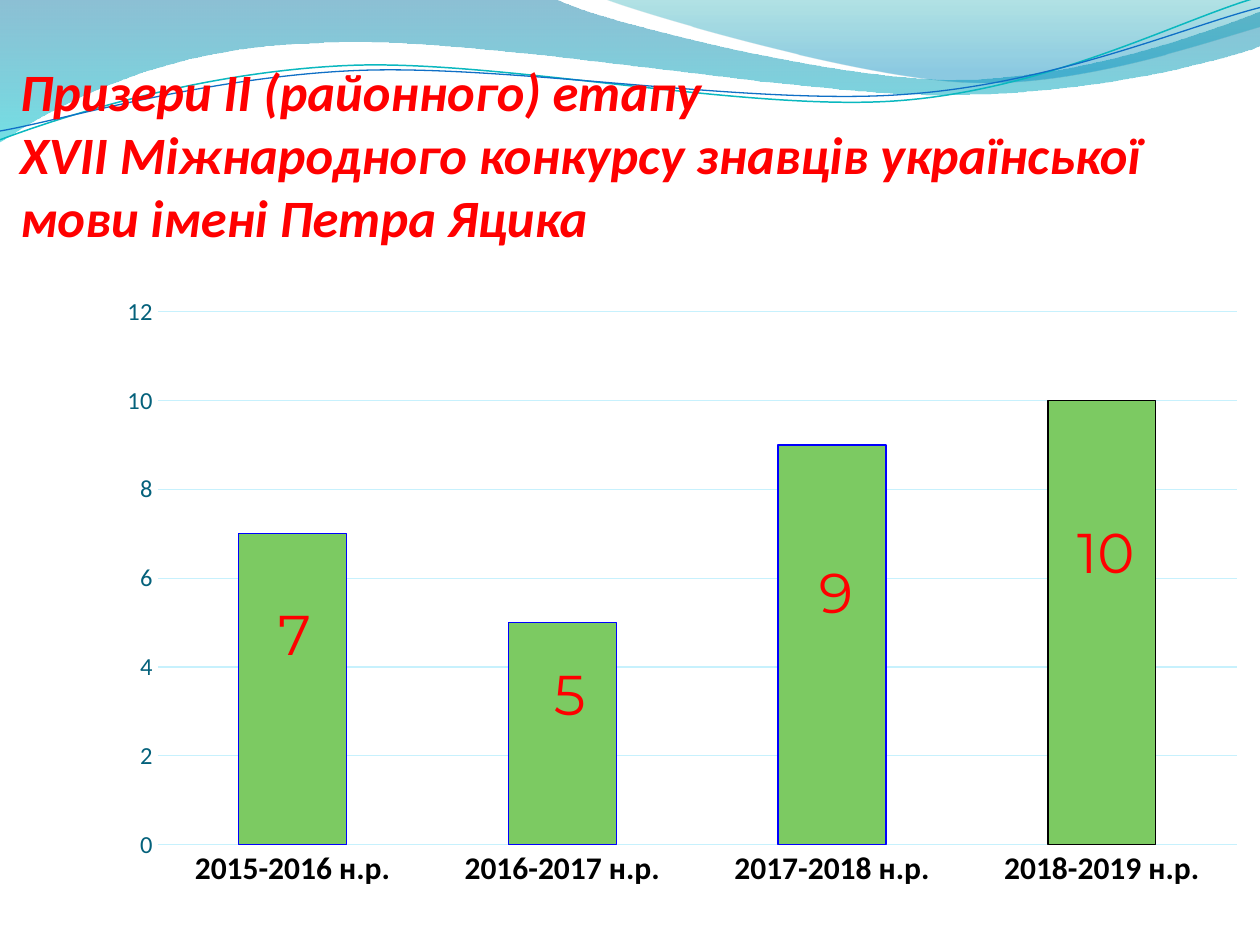
from dataclasses import dataclass

from lxml import etree
from pptx import Presentation
from pptx.chart.data import CategoryChartData
from pptx.dml.color import RGBColor
from pptx.enum.chart import XL_CHART_TYPE, XL_LABEL_POSITION, XL_TICK_MARK
from pptx.enum.text import MSO_ANCHOR
from pptx.oxml.ns import qn
from pptx.util import Inches, Pt

COLUMN = XL_CHART_TYPE.COLUMN_CLUSTERED
LABEL_CENTER = XL_LABEL_POSITION.CENTER
NO_TICK = XL_TICK_MARK.NONE
BOTTOM = MSO_ANCHOR.BOTTOM

RED = RGBColor(0xFF, 0x00, 0x00)
BLACK = RGBColor(0x00, 0x00, 0x00)
BLUE = RGBColor(0x00, 0x00, 0xFF)
GREEN = RGBColor(0x7C, 0xCA, 0x62)
PALE_BLUE = RGBColor(0xC7, 0xF1, 0xFD)
DARK_TEAL = RGBColor(0x04, 0x61, 0x7B)
TEAL_LINE = RGBColor(0x0A, 0xB8, 0xBF)
BLUE_LINE = RGBColor(0x0F, 0x6F, 0xC6)
DEEP_BLUE = RGBColor(0x00, 0x74, 0xA1)
CYAN = RGBColor(0x00, 0xC6, 0xCF)
SEA_GREEN = RGBColor(0x00, 0xA1, 0xA9)
SKY_BLUE = RGBColor(0x00, 0x8B, 0xBF)

WIDTH, HEIGHT = Inches(10), Inches(7.5)
BODY_FONT = "Calibri"
LABEL_FONT = "Montserrat"


@dataclass
class Stop:
    position: float
    color: RGBColor
    opacity: int  # percent


@dataclass
class Wave:
    """Outline in inches: two numbers are a line, six are a Bézier curve."""
    start: tuple
    segments: list
    stops: tuple = ()
    line_color: RGBColor | None = None
    line_width: float = 0


@dataclass
class Year:
    name: str
    winners: int
    label_shift: tuple  # percent of the chart's size
    line_color: RGBColor = BLUE


WAVES = [
    Wave((0, 0), [
        (4.4, -0.01),
        (4.76, 0.17, 6.64, 0.63, 7.58, 0.63),
        (8.53, 0.63, 9.58, 0.26, 10, 0.09),
        (10.01, 0.36),
        (9.83, 0.44, 8.7, 0.76, 7.46, 0.75),
        (6.22, 0.75, 3.82, 0.28, 2.57, 0.34),
        (1.29, 0.36, 0.46, 0.83, -0.01, 1.13),
    ], stops=(Stop(0, DEEP_BLUE, 45), Stop(1, CYAN, 55))),
    Wave((4.79, -0.01), [
        (5.09, 0.11, 6.82, 0.62, 7.69, 0.65),
        (8.56, 0.69, 9.61, 0.32, 10, 0.21),
        (10, 0),
    ], stops=(Stop(0, SEA_GREEN, 30), Stop(0.8, SKY_BLUE, 45))),
    Wave((0, 1.11), [
        (0.48, 0.93, 1.58, 0.57, 2.77, 0.52),
        (3.95, 0.47, 5.93, 0.89, 7.13, 0.8),
        (8.33, 0.71, 9.38, 0.15, 9.98, -0.02),
    ], line_color=TEAL_LINE, line_width=0.85),
    Wave((0, 1.04), [
        (0.47, 0.96, 1.64, 0.61, 2.83, 0.56),
        (4.03, 0.51, 5.97, 0.84, 7.17, 0.75),
        (8.36, 0.67, 9.41, 0.21, 10, 0.06),
    ], line_color=BLUE_LINE, line_width=0.75),
]

YEARS = [
    Year("2015-2016 н.р.", 7, (0.2, -8.8)),
    Year("2016-2017 н.р.", 5, (0.65, -6.3)),
    Year("2017-2018 н.р.", 9, (0.35, -8.4)),
    Year("2018-2019 н.р.", 10, (0.35, -11.2), BLACK),
]

TITLE = ("Призери ІІ (районного) етапу\v"
         "ХVII Міжнародного конкурсу знавців української мови імені Петра Яцика")


def bend_segments(shape, segments: list) -> None:
    """Merge the three points of each curve into one Bézier segment."""
    lines = iter(list(shape._element.iter(qn("a:lnTo"))))
    for segment in segments:
        line = next(lines)
        if len(segment) == 6:
            line.tag = qn("a:cubicBezTo")
            for _ in range(2):
                extra = next(lines)
                line.append(extra[0])
                extra.getparent().remove(extra)


def draw_wave(slide, wave: Wave) -> None:
    points = [(Inches(x), Inches(y)) for segment in wave.segments
              for x, y in zip(segment[::2], segment[1::2])]
    builder = slide.shapes.build_freeform(*(Inches(value) for value in wave.start))
    builder.add_line_segments(points, close=bool(wave.stops))
    shape = builder.convert_to_shape()
    # A closed outline may end with one line more, which stays straight
    bend_segments(shape, wave.segments)
    shape.shadow.inherit = False
    if not wave.stops:
        shape.fill.background()
        shape.line.color.rgb = wave.line_color
        shape.line.width = Pt(wave.line_width)
        return
    shape.line.fill.background()
    shape.fill.gradient()
    shape.fill.gradient_angle = 270
    for gradient_stop, stop in zip(shape.fill.gradient_stops, wave.stops):
        gradient_stop.position = stop.position
        gradient_stop.color.rgb = stop.color
    colors = shape._element.spPr.iter(qn("a:srgbClr"))
    for color, stop in zip(list(colors), wave.stops):
        etree.SubElement(color, qn("a:alpha"), val=str(stop.opacity * 1000))


def set_font(font, name: str, size: float, color: RGBColor, bold: bool = False) -> None:
    font.name, font.size, font.bold = name, Pt(size), bold
    font.color.rgb = color


def draw_title(slide) -> None:
    box = slide.shapes.add_textbox(Inches(0.16), Inches(0.32), Inches(9.84), Inches(1.65))
    frame = box.text_frame
    frame.word_wrap = True
    frame.vertical_anchor = BOTTOM
    frame.margin_left = frame.margin_right = frame.margin_bottom = 0
    paragraph = frame.paragraphs[0]
    paragraph.text = TITLE
    set_font(paragraph.font, BODY_FONT, 30, RED, bold=True)
    paragraph.font.italic = True


def manual_layout(target: str = "", **percents: float) -> etree._Element:
    layout = etree.Element(qn("c:layout"))
    manual = etree.SubElement(layout, qn("c:manualLayout"))
    if target:
        for name, value in (("layoutTarget", target), ("xMode", "edge"), ("yMode", "edge")):
            etree.SubElement(manual, qn(f"c:{name}"), val=value)
    for name, percent in percents.items():
        etree.SubElement(manual, qn(f"c:{name}"), val=f"{percent / 100:.4f}")
    return layout


def draw_chart(slide) -> None:
    data = CategoryChartData()
    data.categories = [year.name for year in YEARS]
    data.add_series("Series 1", [year.winners for year in YEARS])
    chart = slide.shapes.add_chart(
        COLUMN, Inches(0.83), Inches(2.25), Inches(9.17), Inches(4.89), data).chart
    chart.has_legend = chart.has_title = False
    set_font(chart.font, BODY_FONT, 10, BLACK)

    # Plot area
    plot_area = chart._chartSpace.chart.plotArea
    for old_layout in plot_area.findall(qn("c:layout")):
        plot_area.remove(old_layout)
    plot_area.insert(0, manual_layout("inner", x=4.6, y=4.6, w=93.4, h=86.5))

    # Axes
    categories, values = chart.category_axis, chart.value_axis
    for axis in (categories, values):
        axis.major_tick_mark = axis.minor_tick_mark = NO_TICK
    set_font(categories.tick_labels.font, BODY_FONT, 18, BLACK, bold=True)
    set_font(values.tick_labels.font, BODY_FONT, 14, DARK_TEAL)
    values.minimum_scale, values.maximum_scale, values.major_unit = 0, 12, 2
    values.format.line.fill.background()
    for line in (categories.format.line, values.major_gridlines.format.line):
        line.color.rgb = PALE_BLUE
        line.width = Pt(0.75)

    # Columns with their labels
    plot = chart.plots[0]
    plot.gap_width = 150
    plot.vary_by_categories = False
    series = plot.series[0]
    series.data_labels.show_value = True
    set_font(series.data_labels.font, LABEL_FONT, 32, RED)
    for part, color in [(series, BLUE)] + [
            (series.points[index], year.line_color) for index, year in enumerate(YEARS)]:
        part.format.fill.solid()
        part.format.fill.fore_color.rgb = GREEN
        part.format.line.color.rgb = color
        part.format.line.width = Pt(0.75)
    for index, year in enumerate(YEARS):
        label = series.points[index].data_label
        set_font(label.font, LABEL_FONT, 32, RED)
        label.position = LABEL_CENTER
    for element, year in zip(series._element.iter(qn("c:dLbl")), YEARS):
        x, y = year.label_shift
        element.find(qn("c:idx")).addnext(manual_layout(x=x, y=y))
    for leader_lines in series._element.iter(qn("c:showLeaderLines")):
        leader_lines.set("val", "0")


def main() -> None:
    presentation = Presentation()
    presentation.slide_width, presentation.slide_height = WIDTH, HEIGHT
    slide = presentation.slides.add_slide(presentation.slide_layouts[6])
    for wave in WAVES:
        draw_wave(slide, wave)
    draw_title(slide)
    draw_chart(slide)
    presentation.save("out.pptx")


if __name__ == "__main__":
    main()
